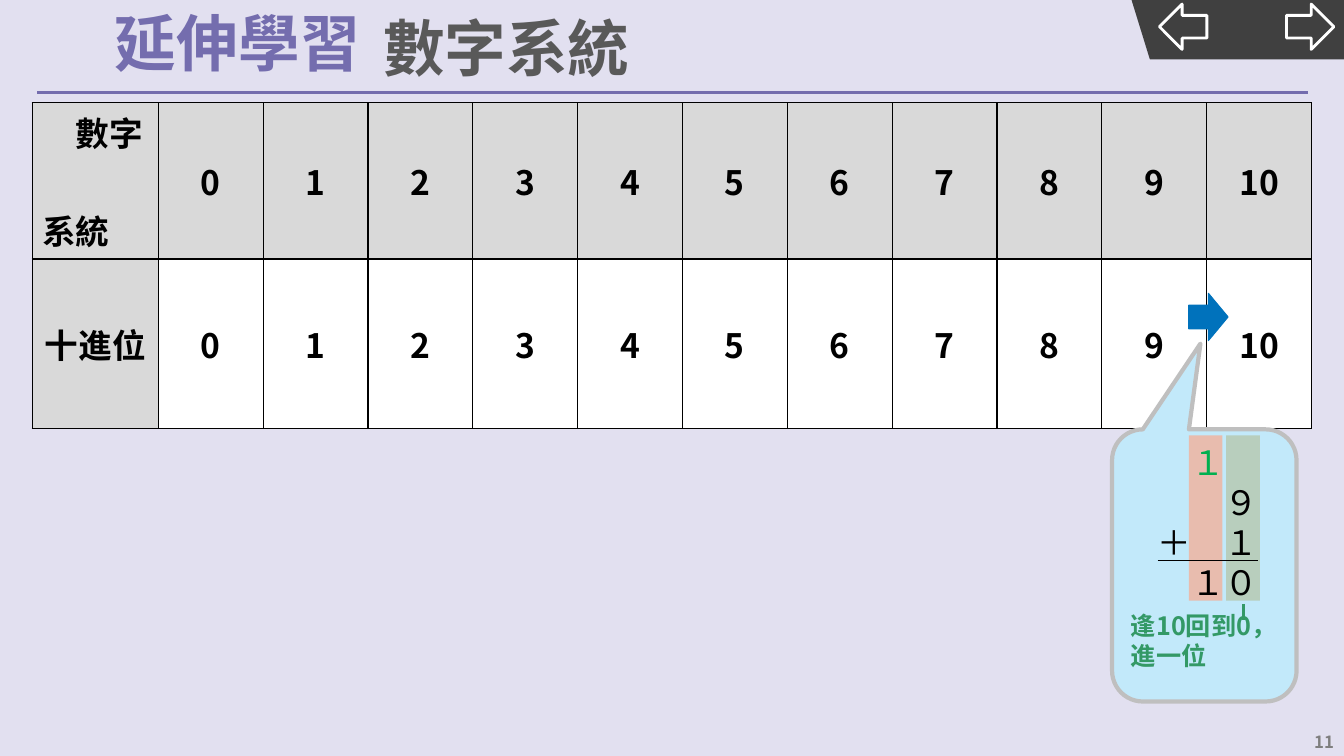
import pptx
import pptx.util
import pptx.dml.color
import pptx.enum.shapes
import pptx.enum.text
import pptx.oxml
import pptx.oxml.ns

Inches, Pt = pptx.util.Inches, pptx.util.Pt
SHAPE = pptx.enum.shapes.MSO_SHAPE
ALIGN = pptx.enum.text.PP_ALIGN
ANCHOR = pptx.enum.text.MSO_ANCHOR
FONT_SC, FONT_TC = "Noto Sans CJK SC", "Noto Sans CJK TC"
COLORS = {
    "background": "E2E0F0", "purple": "746DAE", "title": "595959", "tab": "404040",
    "white": "FFFFFF", "black": "000000", "page": "7F7F7F", "head": "D9D9D9",
    "arrow": "0072BC", "callout": "C2E9FA", "edge": "BFBFBF", "tens": "E8BCAE",
    "ones": "B8CEBD", "carry": "00B050", "note": "339966",
}


def rgb(name):
    return pptx.dml.color.RGBColor.from_string(COLORS[name])


def add_text(tf, text, size=24, color="black", bold=False, font=FONT_SC, underline=False,
             align=ALIGN.LEFT, indent=0, before=None, line=None):
    """Fill the first empty paragraph, or append a new one."""
    p = tf.paragraphs[-1]
    if p.runs:
        p = tf.add_paragraph()
    p.alignment = align
    if indent:
        p._p.get_or_add_pPr().set("marL", str(Inches(indent)))
    if before is not None:
        p.space_before = Pt(before)
    if line is not None:
        p.line_spacing = line
    r = p.add_run()
    r.text = text
    r.font.size, r.font.bold, r.font.underline = Pt(size), bold, underline
    r.font.name = font
    r.font.color.rgb = rgb(color)
    ea = pptx.oxml.parse_xml(f'<a:ea {pptx.oxml.ns.nsdecls("a")} typeface="{font}"/>')
    r._r.rPr.find(pptx.oxml.ns.qn("a:latin")).addnext(ea)


def add_box(s, left, top, width, height, anchor=ANCHOR.TOP):
    tf = s.shapes.add_textbox(*map(Inches, (left, top, width, height))).text_frame
    tf.word_wrap = True
    tf.vertical_anchor = anchor
    return tf


def style(sp, fill=None, line=None, weight=1):
    sp.shadow.inherit = False
    if fill:
        sp.fill.solid()
        sp.fill.fore_color.rgb = rgb(fill)
    else:
        sp.fill.background()
    if line:
        sp.line.color.rgb = rgb(line)
        sp.line.width = Pt(weight)
    else:
        sp.line.fill.background()


def add_shape(s, kind, left, top, width, height, **look):
    sp = s.shapes.add_shape(kind, *map(Inches, (left, top, width, height)))
    style(sp, **look)
    return sp


def add_line(s, x1, y1, x2, y2, color):
    line = s.shapes.add_connector(pptx.enum.shapes.MSO_CONNECTOR.STRAIGHT,
                                  *map(Inches, (x1, y1, x2, y2)))
    line.line.color.rgb = rgb(color)
    line.line.width = Pt(2.25)
    line._element.spPr.append(
        pptx.oxml.parse_xml(f'<a:effectLst {pptx.oxml.ns.nsdecls("a")}/>'))


def add_house(s, left, top):
    outline = [(0.24, 0), (0.32, 0.08), (0.32, 0.02), (0.38, 0.02), (0.38, 0.14),
               (0.47, 0.23), (0.41, 0.23), (0.41, 0.46), (0.06, 0.46), (0.06, 0.23),
               (0, 0.23), (0.24, 0)]
    chimney = [(0.32, 0.08), (0.38, 0.14)]
    eaves = [(0.06, 0.23), (0.41, 0.23)]
    door = [(0.21, 0.46), (0.21, 0.34), (0.26, 0.34), (0.26, 0.46)]
    fb = s.shapes.build_freeform(*outline[0], scale=Inches(1))
    fb.add_line_segments(outline[1:], close=True)
    for stroke in (chimney, eaves, door):
        fb.move_to(*stroke[0])
        fb.add_line_segments(stroke[1:], close=False)
    style(fb.convert_to_shape(Inches(left), Inches(top)), line="white", weight=2)


def add_navigation(s, left, top):
    tab = add_shape(s, SHAPE.PARALLELOGRAM, left, top, 2.29, 0.6, fill="tab")
    tab.adjustments[0] = 0.308
    tab._element.spPr.xfrm.set("flipH", "1")
    for kind, x in ((SHAPE.LEFT_ARROW, 0.28), (SHAPE.RIGHT_ARROW, 1.54)):
        add_shape(s, kind, left + x, top + 0.05, 0.47, 0.45, line="white", weight=2)
    add_house(s, left + 0.91, top + 0.05)


def add_heading(s, left, top):
    tf = add_box(s, left, top, 2.79, 0.84)
    add_text(tf, "延伸學習", size=44, color="purple", bold=True, line=0.9)
    title = s.shapes.title
    title.left, title.top = Inches(left + 2.63), Inches(top - 0.03)
    title.width, title.height = Inches(7.56), Inches(0.92)
    tf = title.text_frame
    tf.auto_size = pptx.enum.text.MSO_AUTO_SIZE.NONE
    tf.vertical_anchor = ANCHOR.MIDDLE
    tf.margin_left = tf.margin_right = Inches(0.13)
    tf.margin_top = tf.margin_bottom = Inches(0.07)
    add_text(tf, "數字系統", size=44, color="title", bold=True, line=0.9)
    add_line(s, 0.37, 0.92, 12.97, 0.92, "purple")


def format_cell(cell, fill):
    cell.fill.solid()
    cell.fill.fore_color.rgb = rgb(fill)
    tcPr = cell._tc.get_or_add_tcPr()
    for i, side in enumerate(("lnL", "lnR", "lnT", "lnB")):
        tcPr.insert(i, pptx.oxml.parse_xml(
            f'<a:{side} {pptx.oxml.ns.nsdecls("a")} w="12700"><a:solidFill>'
            f'<a:srgbClr val="{COLORS["black"]}"/></a:solidFill></a:{side}>'))


def add_number_table(s, left, top):
    widths, heights = [1.25] + [1.04] * 11, [1.55, 1.68]
    table = s.shapes.add_table(len(heights), len(widths), Inches(left), Inches(top),
                               Inches(sum(widths)), Inches(sum(heights))).table
    for col, width in zip(table.columns, widths):
        col.width = Inches(width)
    for row, height in zip(table.rows, heights):
        row.height = Inches(height)
    for i in range(len(heights)):
        for j in range(len(widths)):
            cell = table.cell(i, j)
            format_cell(cell, "head" if i == 0 or j == 0 else "white")
            if i == j == 0:
                add_text(cell.text_frame, "數字", bold=True, indent=0.33)
                add_text(cell.text_frame, "系統", bold=True, before=35)
            else:
                cell.vertical_anchor = ANCHOR.MIDDLE
                add_text(cell.text_frame, str(j - 1) if j else "十進位",
                         bold=True, align=ALIGN.CENTER)


def add_carry_callout(s, left, top):
    # Bubble with its note
    sp = add_shape(s, SHAPE.ROUNDED_RECTANGULAR_CALLOUT, left, top, 1.83, 2.7,
                   fill="callout", line="edge", weight=3)
    for i, value in enumerate((-0.021, -0.815, 0.167)):
        sp.adjustments[i] = value
    tf = sp.text_frame
    tf.word_wrap = True
    tf.vertical_anchor = ANCHOR.TOP
    tf.margin_top, tf.margin_bottom = Inches(1.71), 0
    for text in ("逢10回到0，", "進一位"):
        add_text(tf, text, size=18, color="note", bold=True, line=Pt(21.4))
    add_line(s, left + 1.3, top + 1.73, left + 1.3, top + 1.89, "note")

    # Place-value columns
    for x, fill in ((0.76, "tens"), (1.13, "ones")):
        add_shape(s, SHAPE.RECTANGLE, left + x, top + 0.06, 0.335, 1.64, fill=fill)

    # Written addition, one full-width digit per 0.33 inch
    tf = add_box(s, left + 0.02, top + 0.08, 1.83, 1.72)
    for text, places, look in (("１", 2, {"color": "carry"}), ("９", 3, {}),
                               ("＋　１", 1, {"underline": True}), ("１０", 2, {})):
        add_text(tf, text, indent=places / 3, line=Pt(28.5), **look)


def main():
    prs = pptx.Presentation()
    prs.slide_width, prs.slide_height = Inches(13.33), Inches(7.5)
    s = prs.slides.add_slide(prs.slide_layouts.get_by_name("Title Only"))
    s.background.fill.solid()
    s.background.fill.fore_color.rgb = rgb("background")

    add_navigation(s, 11.22, -0.01)
    add_heading(s, 1.04, 0.08)
    add_number_table(s, 0.32, 1.02)
    add_shape(s, SHAPE.RIGHT_ARROW, 11.79, 2.91, 0.39, 0.47,
              fill="arrow", line="arrow", weight=0.75)
    add_carry_callout(s, 11.03, 4.26)

    # Page number
    tf = add_box(s, 12.9, 7.22, 0.43, 0.28, ANCHOR.MIDDLE)
    add_text(tf, "11", size=12, color="page", bold=True, font=FONT_TC, align=ALIGN.RIGHT)
    prs.save("out.pptx")


if __name__ == "__main__":
    main()
